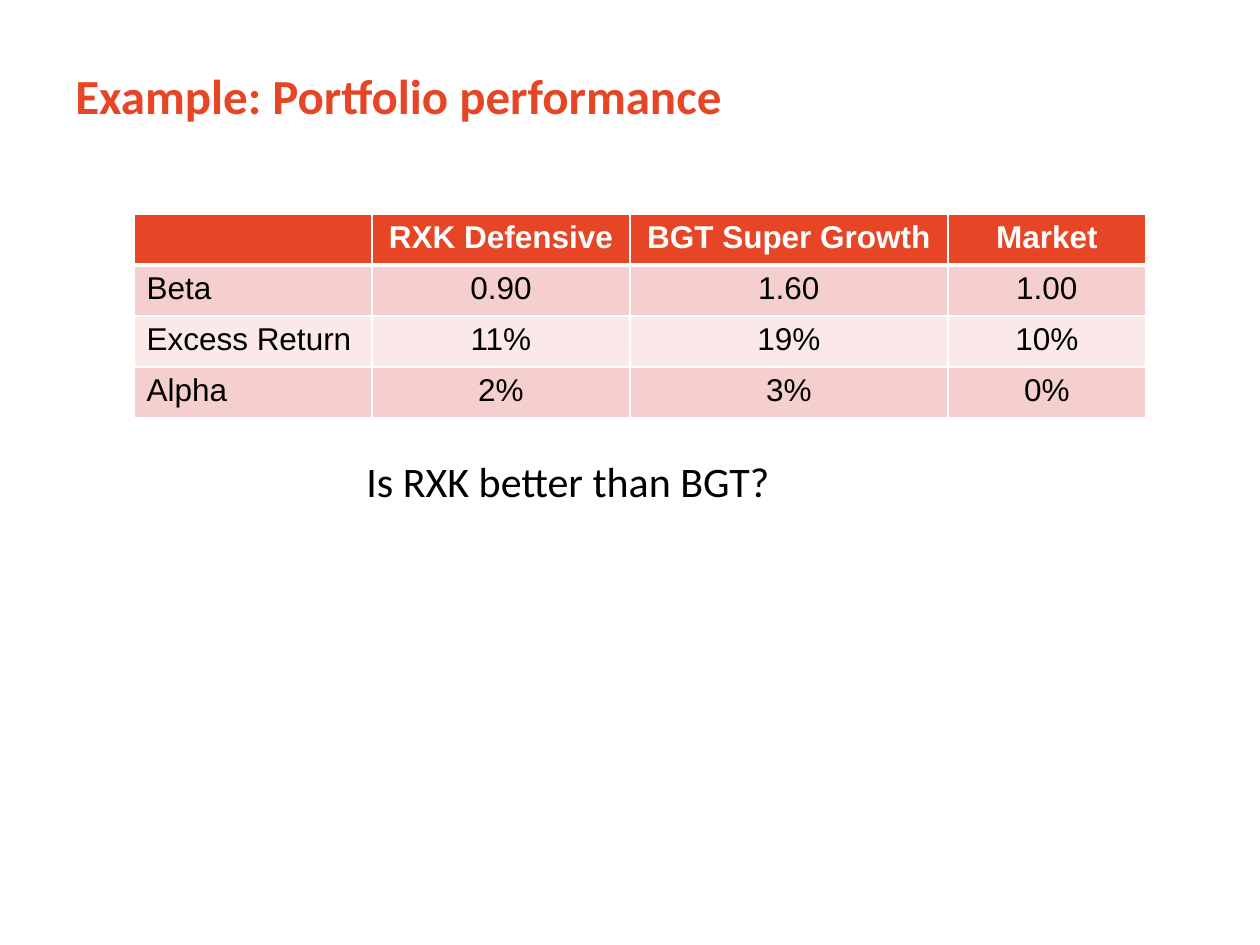
"""Build the portfolio performance slide with its comparison table."""
from lxml.etree import SubElement
from pptx import Presentation
from pptx.dml.color import RGBColor
from pptx.enum.text import MSO_ANCHOR as ANCHOR, PP_ALIGN as ALIGN
from pptx.oxml.ns import qn
from pptx.util import Pt

PX = 914400 // 126
COLORS = {"accent": "E64626", "band": "F5CFCD", "light": "FAE9E8",
          "white": "FFFFFF", "black": "000000"}


def style(p, font, size, color, bold=False):
    p.font.name, p.font.size, p.font.bold = font, Pt(size), bold
    p.font.color.rgb = RGBColor.from_string(COLORS[color])


def add_borders(cell, bottom):
    tcPr = cell._tc.get_or_add_tcPr()
    for i, side in enumerate("LRTB"):
        width = bottom if side == "B" else 1
        ln = SubElement(tcPr, qn(f"a:ln{side}"), w=str(Pt(width)))
        fill = SubElement(ln, qn("a:solidFill"))
        SubElement(fill, qn("a:srgbClr"), val=COLORS["white"])
        tcPr.insert(i, ln)


prs = Presentation()
prs.slide_width, prs.slide_height = 1260 * PX, 945 * PX
s = prs.slides.add_slide(prs.slide_layouts[6])

texts = [
    ("Example: Portfolio performance", (63, 16, 1134, 158), 28, "accent", True),
    ("Is RXK better than BGT?", (354, 449, 494, 63), 24, "black", False),
]
for text, box, size, color, bold in texts:
    sp = s.shapes.add_textbox(*(v * PX for v in box))
    tf = sp.text_frame
    tf.word_wrap = bold
    tf.vertical_anchor = ANCHOR.MIDDLE if bold else ANCHOR.TOP
    p = tf.paragraphs[0]
    p.text = text
    style(p, "Calibri", size, color, bold)

rows = [
    ("", "RXK Defensive", "BGT Super Growth", "Market"),
    ("Beta", "0.90", "1.60", "1.00"),
    ("Excess Return", "11%", "19%", "10%"),
    ("Alpha", "2%", "3%", "0%"),
]
widths = [238, 258, 318, 198]
row_h = 51
table = s.shapes.add_table(len(rows), len(widths), 134 * PX, 214 * PX,
                           sum(widths) * PX, len(rows) * row_h * PX).table
for col, width in zip(table.columns, widths):
    col.width = width * PX

for i, row in enumerate(rows):
    table.rows[i].height = row_h * PX
    header = i == 0
    fill = "accent" if header else ("light", "band")[i % 2]
    for j, text in enumerate(row):
        cell = table.cell(i, j)
        cell.fill.solid()
        cell.fill.fore_color.rgb = RGBColor.from_string(COLORS[fill])
        add_borders(cell, 3 if header else 1)
        p = cell.text_frame.paragraphs[0]
        p.text = text
        p.alignment = ALIGN.CENTER if j else ALIGN.LEFT
        style(p, "Arial", 18, "white" if header else "black", header)

for cell in table.iter_cells():
    cell.vertical_anchor = ANCHOR.TOP

prs.save("out.pptx")
